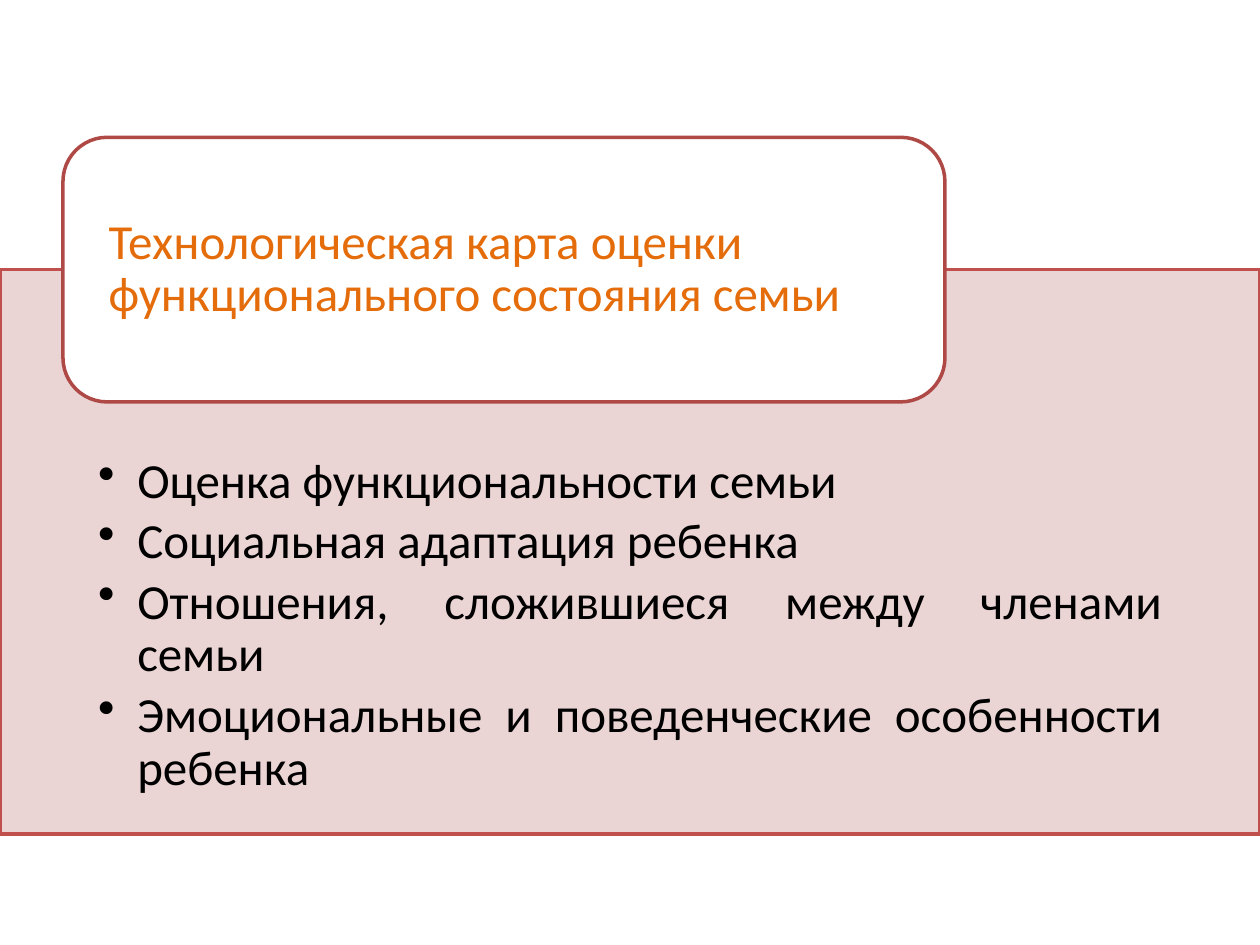
from lxml.etree import SubElement
from pptx import Presentation
from pptx.dml.color import RGBColor
from pptx.enum.shapes import MSO_SHAPE
from pptx.enum.text import MSO_ANCHOR, PP_ALIGN
from pptx.oxml.ns import qn
from pptx.util import Inches, Pt

TITLE = "Технологическая карта оценки функционального состояния семьи"
TOPICS = [
    "Оценка функциональности семьи",
    "Социальная адаптация ребенка",
    "Отношения, сложившиеся между членами семьи",
    "Эмоциональные и поведенческие особенности ребенка",
]


def paint(color_format, color):
    """Set a fill, line or font colour from a hex string."""
    color_format.rgb = RGBColor.from_string(color)


def add_panel(page, kind, place, fill, line, insets, anchor):
    """Add an outlined shape whose text frame is ready for text."""
    panel = page.shapes.add_shape(kind, *map(Inches, place))
    panel.shadow.inherit = False
    panel.fill.solid()
    paint(panel.fill.fore_color, fill)
    paint(panel.line.color, line)
    panel.line.width = Pt(2)
    frame = panel.text_frame
    frame.word_wrap = True
    frame.vertical_anchor = anchor
    (frame.margin_left, frame.margin_top,
     frame.margin_right, frame.margin_bottom) = map(Inches, insets)
    return panel


def set_opacity(shape, percent):
    """Make the solid fill of a shape partly transparent."""
    color = shape.fill._xPr.find(qn("a:solidFill"))[0]
    SubElement(color, qn("a:alpha"), val=str(percent * 1000))


def add_bullet(paragraph):
    """Give a paragraph a round bullet with a hanging indent."""
    properties = paragraph._p.get_or_add_pPr()
    properties.set("marL", str(Inches(0.31)))
    properties.set("indent", str(-Inches(0.31)))
    SubElement(properties, qn("a:buChar"), char="•")


def write(panel, texts, color, align, space_after, bulleted=False):
    """Write one paragraph per text into a panel."""
    frame = panel.text_frame
    for index, text in enumerate(texts):
        paragraph = frame.add_paragraph() if index else frame.paragraphs[0]
        paragraph.text = text
        paragraph.alignment = align
        paragraph.line_spacing = 0.9
        paragraph.space_after = Pt(space_after)
        if bulleted:
            paragraph.level = 1
            add_bullet(paragraph)
        paragraph.font.name = "Calibri"
        paragraph.font.size = Pt(28)
        paint(paragraph.font.color, color)


def main():
    """Build the slide and save the deck."""
    deck = Presentation()
    deck.slide_width, deck.slide_height = Inches(10), Inches(7.5)
    page = deck.slides.add_slide(deck.slide_layouts[6])

    topics = add_panel(page, MSO_SHAPE.RECTANGLE, (0, 2.14, 10, 4.48), "E8D0D0",
                       "C0504D", (0.78, 1.48, 0.78, 0.22), MSO_ANCHOR.TOP)
    set_opacity(topics, 90)
    write(topics, TOPICS, "000000", PP_ALIGN.JUSTIFY, 4.2, bulleted=True)

    title = add_panel(page, MSO_SHAPE.ROUNDED_RECTANGLE, (0.5, 1.09, 7, 2.1), "FFFFFF",
                      "AE4946", (0.26, 0, 0.26, 0), MSO_ANCHOR.MIDDLE)
    write(title, [TITLE], "E46C0A", PP_ALIGN.LEFT, 9.8)

    deck.save("out.pptx")


if __name__ == "__main__":
    main()
